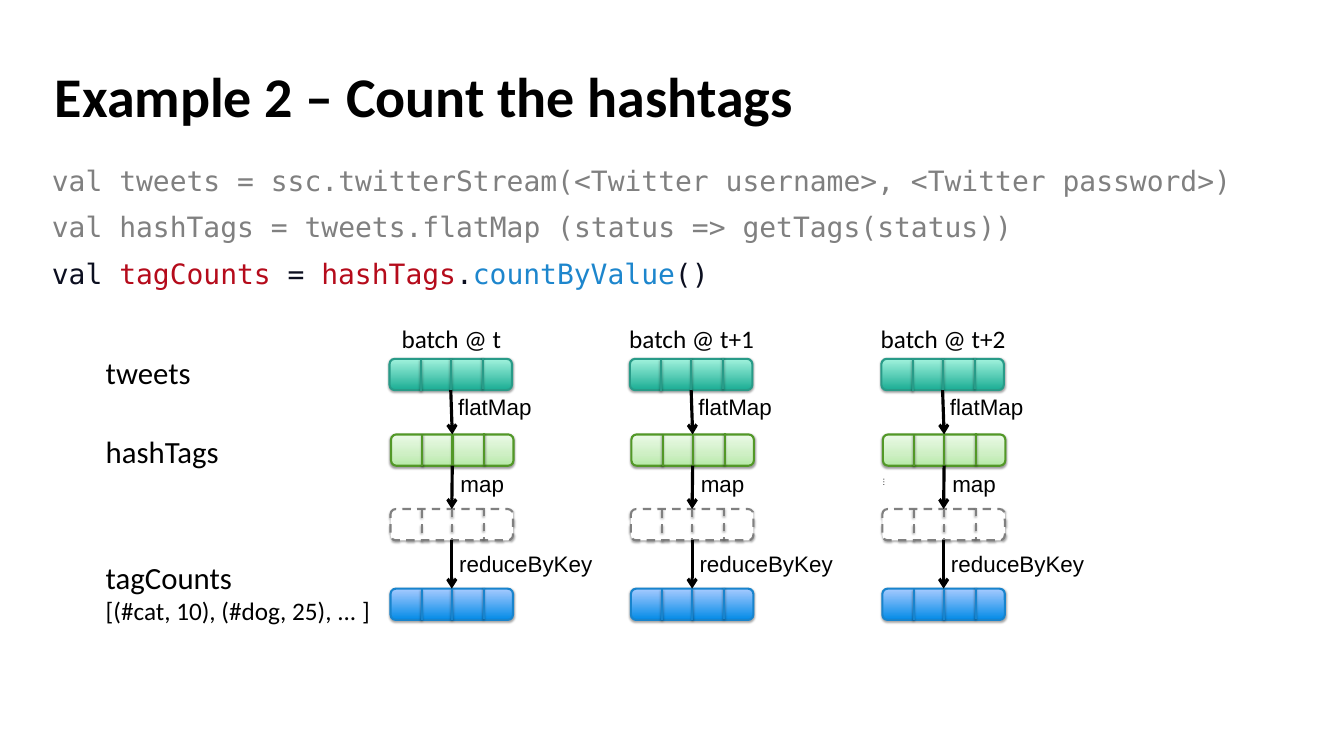
from lxml.etree import SubElement
from pptx import Presentation
from pptx.dml.color import RGBColor
from pptx.enum.dml import MSO_LINE as Dash
from pptx.enum.shapes import MSO_CONNECTOR as Conn, MSO_SHAPE as Kind
from pptx.enum.text import MSO_ANCHOR as Anchor, PP_ALIGN as Align
from pptx.oxml.ns import qn
from pptx.util import Inches, Pt

deck = Presentation()
deck.slide_width, deck.slide_height = Inches(26.67), Inches(15)
slide = deck.slides.add_slide(deck.slide_layouts[6])
shapes = slide.shapes
rgb = RGBColor.from_string


def add_text(area, lines, font, pad=(0.1, 0.05), align=Align.LEFT,
             anchor=Anchor.MIDDLE):
    """Add a text box; each line is (size, [(text, colour), ...])."""
    box = shapes.add_textbox(*map(Inches, area))
    frame = box.text_frame
    frame.word_wrap = True
    frame.vertical_anchor = anchor
    frame.margin_left = frame.margin_right = Inches(pad[0])
    frame.margin_top = frame.margin_bottom = Inches(pad[1])
    for i, (size, runs) in enumerate(lines):
        para = frame.paragraphs[0] if i == 0 else frame.add_paragraph()
        para.alignment = align
        para.font.size, para.font.name = Pt(size), font
        for text, color in runs:
            run = para.add_run()
            run.text = text
            run.font.color.rgb = rgb(color)
    return box


def set_look(item, color, width, dash=None, shade=None):
    """Set the line, and a soft shadow if shade (its opacity in percent) is given."""
    item.line.color.rgb = rgb(color)
    item.line.width = Pt(width)
    if dash:
        item.line.dash_style = dash
    props = item._element.spPr
    effects = SubElement(props, qn("a:effectLst"))
    if shade:
        shadow = SubElement(effects, qn("a:outerShdw"), blurRad=str(Pt(3.1)),
                            dist=str(Pt(1.8)), dir="5400000", rotWithShape="0")
        black = SubElement(shadow, qn("a:srgbClr"), val="000000")
        SubElement(black, qn("a:alpha"), val=str(shade * 1000))


# Title and code
title = add_text((1.03, 1.01, 24.49, 1.74),
                 [(80, [("Example 2 – Count the hashtags", "000000")])],
                 "Calibri", (0.06, 0.06))
title.text_frame.paragraphs[0].font.bold = True

GRAY, DARK, RED, BLUE = "808080", "0C0F20", "B50B1B", "1D86CD"
code = [
    [("val tweets = ssc.twitterStream(<Twitter username>, <Twitter password>)", GRAY)],
    [("val hashTags = tweets.flatMap (status => getTags(status))", GRAY)],
    [("val ", DARK), ("tagCounts", RED), (" = ", DARK), ("hashTags", RED),
     (".", DARK), ("countByValue", BLUE), ("()", DARK)],
]
body = add_text((1.03, 3.25, 24.49, 2.67), [(40, runs) for runs in code],
                "DejaVu Sans Mono", (0, 0), anchor=Anchor.TOP)
for para in body.text_frame.paragraphs[1:]:
    para.space_before = Pt(18)

# Batches: one column each, with one row of partitions per step
WIDE, HIGH = 2.43, 0.62
cuts = [(1.22, 0), (1.85, -0.02), (0.62, 0.01)]
# shift, top, gradient stops, line, dash, shadow opacity
rows = [
    (0, 7.12, [(0, "1BAD94"), (100, "A1F2DD")], "289B88", None, 35),
    (0.03, 8.62, [(0, "B7EAA8"), (35, "CDEFC3"), (100, "EBFAE7")], "529827", None, 38),
    (0.02, 10.1, None, GRAY, Dash.DASH, 35),
    (0.02, 11.68, [(0, "038BE7"), (100, "A6CAFF")], "1884CD", None, 35),
]
# name, shift, top, width
steps = [("flatMap", 1.2, 7.8, 1.78), ("map", 0.95, 9.33, 1.78),
         ("reduceByKey", 1.22, 10.92, 2.97)]
batches = [("batch @ t", 7.73), ("batch @ t+1", 12.5), ("batch @ t+2", 17.49)]

dots = add_text((17.27, 9.22, 0.84, 0.71), [(12, [("…", "000000")])], "Arial",
                align=Align.CENTER, anchor=Anchor.TOP)
dots.rotation = 270

for batch, left in batches:
    last = None
    for shift, top, stops, color, dash, shade in rows:
        x = left + shift
        box = shapes.add_shape(Kind.FLOWCHART_ALTERNATE_PROCESS, Inches(x),
                               Inches(top), Inches(WIDE), Inches(HIGH))
        if stops:
            box.fill.gradient()
            box.fill.gradient_angle = 90
            ramp = box._element.spPr.find(".//" + qn("a:gsLst"))
            ramp.clear()
            for pos, tint in stops:
                stop = SubElement(ramp, qn("a:gs"), pos=str(pos * 1000))
                SubElement(stop, qn("a:srgbClr"), val=tint)
        else:
            box.fill.solid()
            box.fill.fore_color.rgb = rgb("FFFFFF")
        set_look(box, color, 3, dash, shade)
        for dx, dy in cuts:
            cut = shapes.add_connector(
                Conn.STRAIGHT, Inches(x + dx), Inches(top + dy),
                Inches(x + dx), Inches(top + dy + HIGH))
            set_look(cut, color, 3, dash, shade)
        if last:
            arrow = shapes.add_connector(Conn.STRAIGHT, 0, 0, 0, 0)
            arrow.begin_connect(last, 2)
            arrow.end_connect(box, 0)
            set_look(arrow, "000000", 4.5)
            SubElement(arrow.line._get_or_add_ln(), qn("a:tailEnd"), type="arrow")
        last = box
    for name, shift, top, width in steps:
        add_text((left + shift, top, width, 0.54), [(32, [(name, "000000")])],
                 "Arial", (0.1, 0), Align.CENTER, Anchor.TOP)
    add_text((left - 0.24, 6.43, 2.93, 0.55), [(36, [(batch, "000000")])],
             "Calibri", align=Align.CENTER)

# Row names
for name, top in [("tweets", 7), ("hashTags", 8.58)]:
    add_text((2, top, 2.83, 0.75), [(44, [(name, "000000")])], "Calibri")
add_text((2, 11.08, 6.25, 1.33),
         [(44, [("tagCounts", "000000")]),
          (36, [("[(#cat, 10), (#dog, 25), ... ]", "000000")])], "Calibri")

deck.save("out.pptx")
